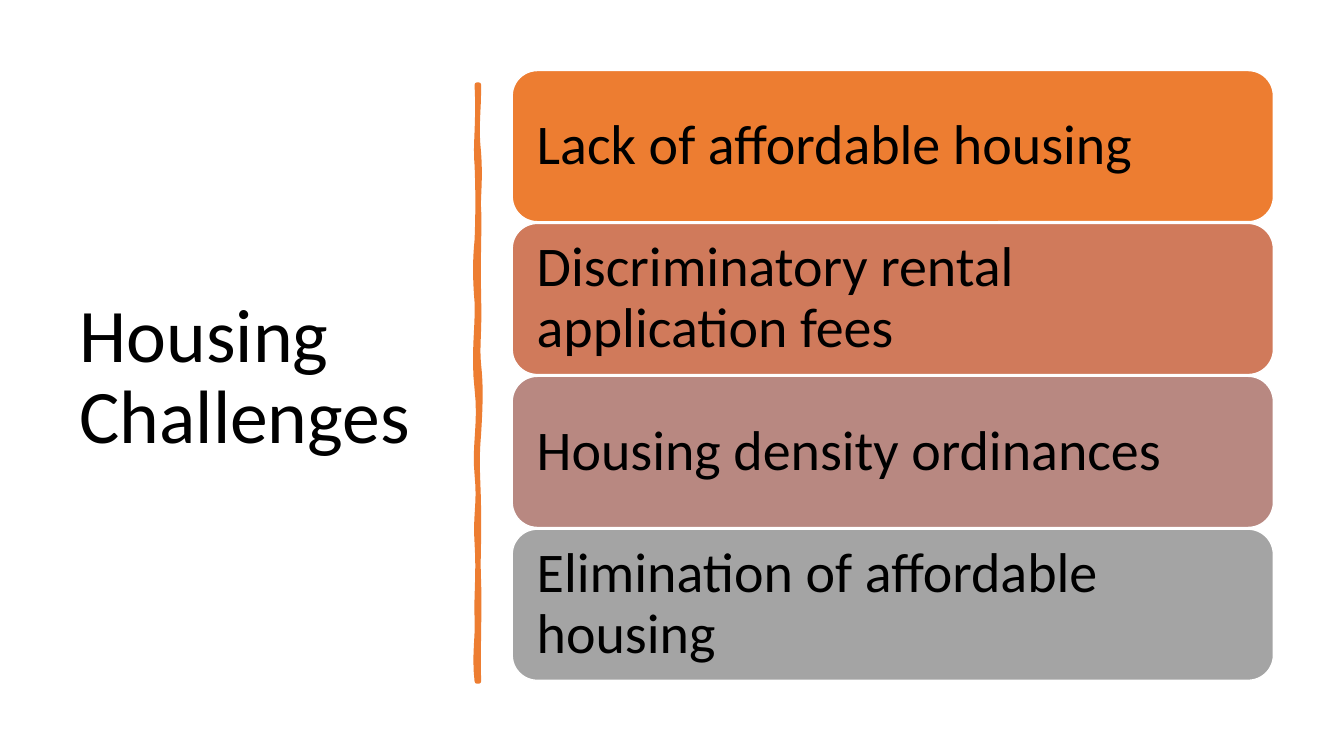
from pptx import Presentation
from pptx.dml.color import RGBColor
from pptx.enum.shapes import MSO_SHAPE
from pptx.enum.text import MSO_ANCHOR, PP_ALIGN
from pptx.util import Inches, Pt

ROUNDED = MSO_SHAPE.ROUNDED_RECTANGLE
MIDDLE = MSO_ANCHOR.MIDDLE
LEFT = PP_ALIGN.LEFT

SLIDE_W, SLIDE_H = 13.33, 7.5
TOP = 0.7
CARD_X, CARD_W, CARD_H = 5.08, 7.55, 1.5
LIST_H = 6.05
CARDS = [
    ("Lack of affordable housing", "ED7D31"),
    ("Discriminatory rental application fees", "D07A5B"),
    ("Housing density ordinances", "B88881"),
    ("Elimination of affordable housing", "A4A4A4"),
]

RULE_TOP = 0.84
RIGHT_X, LEFT_X = 4.75, 4.73
# Each wave: first control x and y, second control x and y, end y.
RIGHT_WAVES = [
    (4.75, 1.15, 4.72, 1.25, 1.52), (4.77, 1.79, 4.74, 1.97, 2.08),
    (4.76, 2.2, 4.74, 2.55, 2.94), (4.76, 3.33, 4.73, 3.43, 3.62),
    (4.77, 3.81, 4.77, 3.97, 4.3), (4.72, 4.63, 4.75, 4.74, 5.16),
    (4.75, 5.57, 4.74, 5.53, 5.78), (4.76, 6.03, 4.74, 6.47, 6.76),
]
LEFT_WAVES = [
    (4.7, 6.49, 4.74, 6.32, 6.13), (4.72, 5.95, 4.75, 5.69, 5.39),
    (4.71, 5.1, 4.76, 5, 4.71), (4.7, 4.42, 4.77, 4.2, 3.86),
    (4.69, 3.51, 4.74, 3.25, 3), (4.71, 2.75, 4.71, 2.59, 2.38),
    (4.74, 2.16, 4.74, 1.85, 1.64), (4.71, 1.43, 4.75, 1.21, 0.84),
]


def color(value):
    return RGBColor.from_string(value)


def paint(sp, fill, line, width):
    sp.shadow.inherit = False
    sp.fill.solid()
    sp.fill.fore_color.rgb = color(fill)
    sp.line.color.rgb = color(line)
    sp.line.width = Pt(width)


def write(sp, text, size, inset_x, inset_y, font="Calibri", ink="000000"):
    tf = sp.text_frame
    tf.word_wrap = True
    tf.vertical_anchor = MIDDLE
    tf.margin_left = tf.margin_right = Inches(inset_x)
    tf.margin_top = tf.margin_bottom = Inches(inset_y)
    p = tf.paragraphs[0]
    p.alignment = LEFT
    p.line_spacing = 0.9
    r = p.add_run()
    r.text = text
    r.font.name = font
    r.font.size = Pt(size)
    r.font.color.rgb = color(ink)


def add_title(s, text):
    sp = s.shapes.add_textbox(Inches(0.69), Inches(TOP), Inches(3.74), Inches(6.11))
    write(sp, text, 54, 0.1, 0.05)


def curve(start, wave, x, steps=8):
    x1, y1, x2, y2, y = wave
    for i in range(1, steps + 1):
        t = i / steps
        u = 1 - t
        weights = (u ** 3, 3 * u * u * t, 3 * u * t * t, t ** 3)
        yield tuple(
            Inches(sum(w * v for w, v in zip(weights, axis)))
            for axis in ((x, x1, x2, x), (start, y1, y2, y))
        )


def edge(x, start, waves):
    points = [(Inches(x), Inches(start))]
    for wave in waves:
        points.extend(curve(start, wave, x))
        start = wave[-1]
    return points


def add_wavy_rule(s, fill):
    points = edge(RIGHT_X, RULE_TOP, RIGHT_WAVES)
    points += edge(LEFT_X, RIGHT_WAVES[-1][-1], LEFT_WAVES)
    builder = s.shapes.build_freeform(*points[0], scale=1.0)
    builder.add_line_segments(points[1:], close=True)
    paint(builder.convert_to_shape(), fill, fill, 3.25)


def add_card(s, row, text, fill):
    pitch = (LIST_H - CARD_H) / (len(CARDS) - 1)
    sp = s.shapes.add_shape(ROUNDED, Inches(CARD_X), Inches(TOP + row * pitch),
                            Inches(CARD_W), Inches(CARD_H))
    sp.adjustments[0] = 0.167
    paint(sp, fill, "FFFFFF", 1)
    write(sp, text, 40, 0.17, 0.17)


def main():
    prs = Presentation()
    prs.slide_width, prs.slide_height = Inches(SLIDE_W), Inches(SLIDE_H)
    s = prs.slides.add_slide(prs.slide_layouts[6])
    add_title(s, "Housing Challenges")
    add_wavy_rule(s, "ED7D31")
    for row, (text, fill) in enumerate(CARDS):
        add_card(s, row, text, fill)
    prs.save("out.pptx")


if __name__ == "__main__":
    main()
